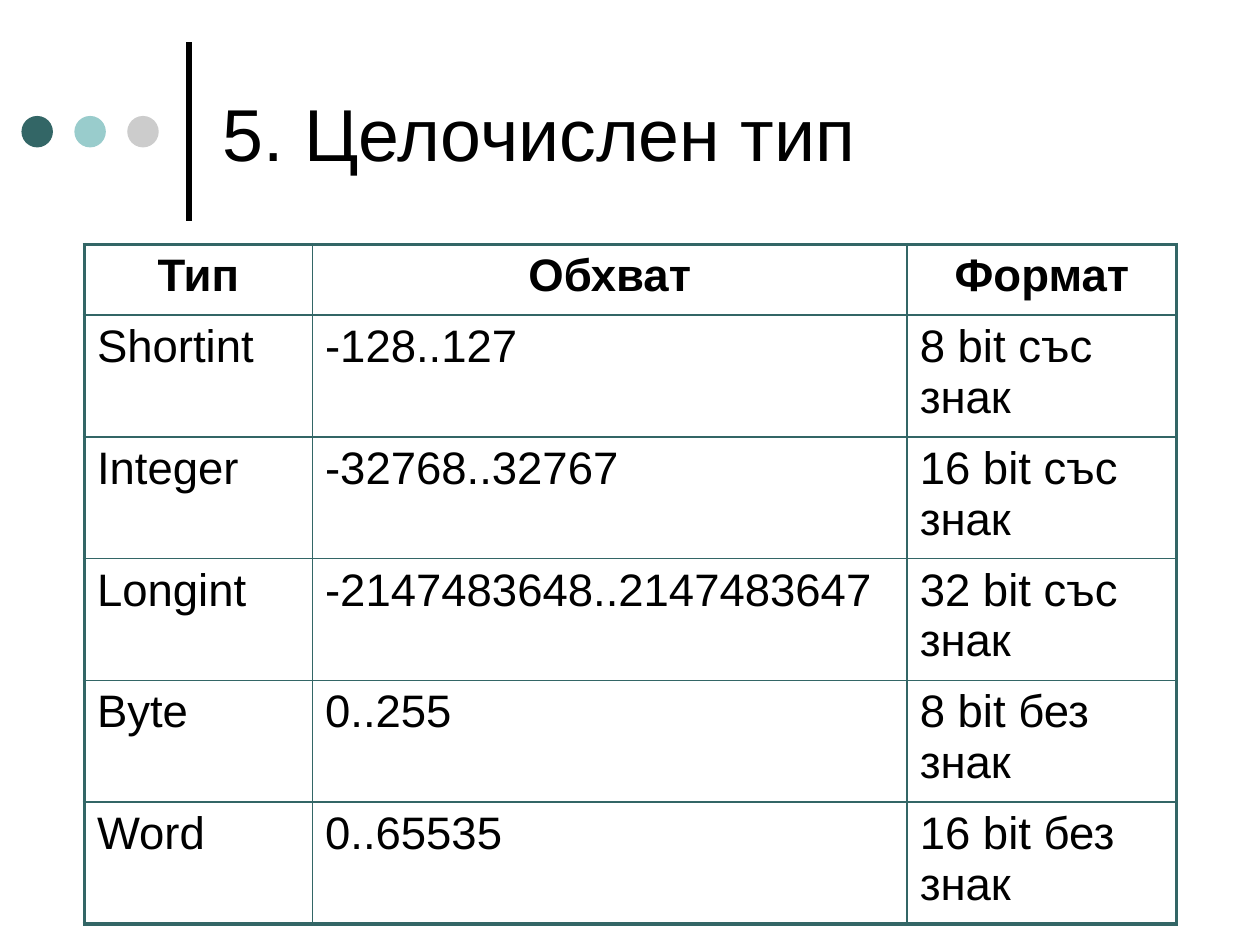
from lxml import etree
from pptx import Presentation
from pptx import util as u
from pptx.dml.color import RGBColor
from pptx.enum import shapes, text
from pptx.oxml.ns import qn

BLACK = RGBColor(0, 0, 0)
TEAL = RGBColor(0x33, 0x66, 0x66)
AQUA = RGBColor(0x99, 0xCC, 0xCC)
GREY = RGBColor(0xCC, 0xCC, 0xCC)

TITLE = "5. Целочислен тип"
ROWS = [
    ("Тип", "Обхват", "Формат"),
    ("Shortint", "-128..127", "8 bit със знак"),
    ("Integer", "-32768..32767", "16 bit със знак"),
    ("Longint", "-2147483648..2147483647", "32 bit със знак"),
    ("Byte", "0..255", "8 bit без знак"),
    ("Word", "0..65535", "16 bit без знак"),
]
WIDTHS = [1.81, 4.72, 2.14]
HEIGHTS = [0.56] + [0.9] * (len(ROWS) - 1)
DOTS = [TEAL, AQUA, GREY]
THIN, THICK = 1, 2.25


def style(para, size, bold=False):
    look = {"name": "Arial", "size": u.Pt(size), "bold": bold}
    for key, val in look.items():
        setattr(para.font, key, val)
    para.font.color.rgb = BLACK


def edge(cell, side, width):
    """Draw one border of a cell; side is L, R, T or B."""
    props = cell._tc.get_or_add_tcPr()
    line = etree.SubElement(props, qn(f"a:ln{side}"), w=str(u.Pt(width)))
    fill = etree.SubElement(line, qn("a:solidFill"))
    etree.SubElement(fill, qn("a:srgbClr"), val=str(TEAL))


def add_decor(slide):
    bar = slide.shapes.add_connector(
        shapes.MSO_CONNECTOR.STRAIGHT,
        *map(u.Inches, (1.5, 1.75, 1.5, 0.33)))
    bar.line.color.rgb = BLACK
    bar.line.width = u.Pt(3)
    etree.SubElement(bar._element.spPr, qn("a:effectLst"))
    for i, color in enumerate(DOTS):
        dot = slide.shapes.add_shape(
            shapes.MSO_SHAPE.OVAL,
            *map(u.Inches, (0.17 + 0.42 * i, 0.92, 0.25, 0.25)))
        dot.shadow.inherit = False
        dot.fill.solid()
        dot.fill.fore_color.rgb = color
        dot.line.fill.background()


def add_title(slide):
    box = slide.shapes.add_textbox(*map(u.Inches, (1.67, 0.21, 7.67, 1.67)))
    frame = box.text_frame
    frame.word_wrap = True
    frame.vertical_anchor = text.MSO_ANCHOR.MIDDLE
    frame.text = TITLE
    style(frame.paragraphs[0], 42)


def add_grid(slide):
    place = (0.67, 1.94, sum(WIDTHS), sum(HEIGHTS))
    table = slide.shapes.add_table(
        len(ROWS), len(WIDTHS), *map(u.Inches, place)).table
    table.first_row = table.horz_banding = False
    for col, width in zip(table.columns, WIDTHS):
        col.width = u.Inches(width)
    for row, height in zip(table.rows, HEIGHTS):
        row.height = u.Inches(height)
    for r, row in enumerate(ROWS):
        for c, value in enumerate(row):
            cell = table.cell(r, c)
            cell.text = value
            para = cell.text_frame.paragraphs[0]
            style(para, 26, bold=r == 0)
            if r == 0:
                para.alignment = text.PP_ALIGN.CENTER
            outer = {"L": c == 0, "R": c == len(WIDTHS) - 1,
                     "T": r == 0, "B": r == len(ROWS) - 1}
            for side, thick in outer.items():
                edge(cell, side, THICK if thick else THIN)
            cell.fill.background()


def main():
    deck = Presentation()
    deck.slide_width, deck.slide_height = u.Inches(10), u.Inches(7.5)
    slide = deck.slides.add_slide(deck.slide_layouts[6])
    add_decor(slide)
    add_title(slide)
    add_grid(slide)
    deck.save("out.pptx")


if __name__ == "__main__":
    main()
